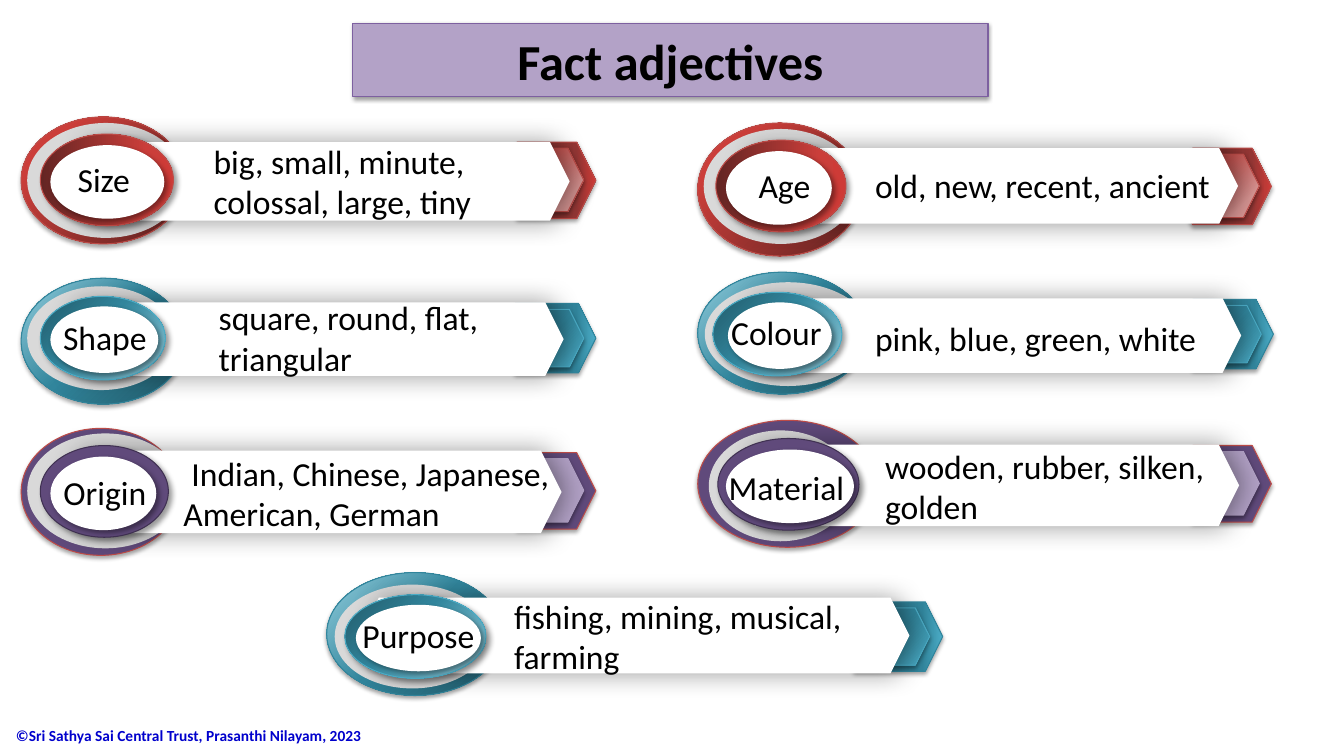
from lxml.etree import SubElement
from pptx import Presentation
from pptx.dml.color import RGBColor
from pptx.enum.shapes import MSO_SHAPE
from pptx.enum.text import MSO_ANCHOR, PP_ALIGN
from pptx.oxml.ns import qn
from pptx.util import Pt

PX = 9144  # 100 px to the inch

# Fills are one colour or (stops, clockwise angle); shadows are opacity, blur, distance, angle
RED_RING = [(0, "632523"), (80, "CB3E3A"), (100, "CE3B37")]
THEME = {
    "font": "Calibri", "title_size": 36, "body_size": 24, "footer_size": 11,
    "text": "000000", "footer": "0000CC", "white": "FFFFFF", "grey": "D9D9D9",
    "title_fill": "B3A2C7", "title_line": "7D60A0",
    "title_shadow": (38, 3.1, 1.6, 90), "edge_shadow": (35, 3.1, 1.8, 90),
    "bar_shadow": (40, 19, 3, 0), "ring_shadow": (40, 4, 3, 45),
    "red": {
        "tip": ([(0, "632523"), (80, "953735"), (100, "CE3B37")], 0),
        "inner_tip": ([(0, "632523"), (38, "C0504D"), (80, "D99694"), (100, "D99694")], 45),
        "disc": (RED_RING, 225), "ring": (RED_RING, 0),
        "line": "BF4C48", "inner_line": "BF4C48", "ring_line": "BF4C48",
    },
    "teal": {
        "tip": ([(0, "215968"), (80, "31859C"), (100, "4BACC6")], 0),
        "inner_tip": ([(0, "215968"), (53, "31859C"), (100, "4BACC6")], 45),
        "disc": ([(0, "215968"), (52, "31859C"), (100, "93CDDD")], 225),
        "ring": ([(0, "215968"), (43, "31859C"), (100, "93CDDD")], 45),
        "line": "31859C", "inner_line": "4BACC6", "ring_line": "4BACC6",
    },
    "purple": {
        "tip": "604A7B", "inner_tip": "B3A2C7", "disc": "604A7B", "ring": "604A7B",
        "line": "BF4C48", "inner_line": "B3A2C7", "ring_line": "403152",
    },
}

# Boxes are left, top, width, height; label is centre and top; indent is for the first line
ADJECTIVES = [
    dict(label="Age", words="old, new, recent, ancient", palette="red",
         tip=(1164, 147, 97, 76), disc=(692, 122, 163, 132), crescent=(698, 128, 153, 114),
         bar=(728, 147, 500, 75), ring=(710, 139, 129, 91), centre=(720, 150, 105, 73),
         label_at=(778, 159), words_box=(858, 159, 362, 50), indent=0),
    dict(label="Size", words="big, small, minute, colossal, large, tiny", palette="red",
         tip=(494, 141, 97, 76), disc=(21, 116, 163, 126), crescent=(27, 122, 156, 114),
         bar=(65, 141, 500, 78), ring=(40, 133, 132, 91), centre=(50, 144, 113, 73),
         label_at=(103, 153), words_box=(202, 135, 362, 91), indent=0),
    dict(label="Shape", words="square, round, flat, triangular", palette="teal",
         tip=(494, 301, 97, 69), disc=(21, 276, 163, 125), crescent=(27, 284, 147, 103),
         bar=(57, 300, 502, 73), ring=(40, 294, 124, 83), centre=(50, 304, 107, 66),
         label_at=(104, 309), words_box=(207, 290, 362, 91), indent=0),
    dict(label="Colour", words="pink, blue, green, white", palette="teal",
         tip=(1166, 297, 97, 69), disc=(692, 270, 168, 121), crescent=(699, 280, 165, 103),
         bar=(729, 296, 502, 74), ring=(707, 290, 128, 83), centre=(722, 300, 103, 66),
         label_at=(770, 305), words_box=(858, 310, 362, 50), indent=0),
    dict(label="Origin", words="Indian, Chinese, Japanese, American, German", palette="purple",
         tip=(494, 449, 97, 76), disc=(21, 425, 158, 126), crescent=(27, 430, 155, 114),
         bar=(57, 447, 500, 82), ring=(40, 442, 127, 91), centre=(50, 453, 105, 73),
         label_at=(104, 463), words_box=(172, 444, 415, 91), indent=8),
    dict(label="Material", words="wooden, rubber, silken, golden", palette="purple",
         tip=(1164, 442, 97, 76), disc=(692, 417, 178, 126), crescent=(703, 427, 142, 110),
         bar=(729, 441, 500, 81), ring=(712, 435, 140, 91), centre=(720, 446, 127, 73),
         label_at=(780, 458), words_box=(868, 437, 362, 91), indent=0),
    dict(label="Purpose", words="fishing, mining, musical, farming", palette="teal",
         tip=(830, 597, 105, 69), disc=(324, 568, 175, 122), crescent=(332, 580, 154, 103),
         bar=(357, 593, 545, 75), ring=(342, 590, 140, 83), centre=(353, 600, 124, 66),
         label_at=(415, 605), words_box=(500, 586, 362, 91), indent=0),
]


def draw(shapes, kind, box, fill, line=None, shadow=None):
    """Add a preset shape with a plain or gradient fill, outline and outer shadow."""
    shape = shapes.add_shape(kind, *[value * PX for value in box])
    properties = shape.element.spPr
    if isinstance(fill, str):
        shape.fill.solid()
        shape.fill.fore_color.rgb = RGBColor.from_string(fill)
    else:
        stops, angle = fill
        shape.fill.gradient()
        gradient = properties.find(qn("a:gradFill"))
        stop_list = gradient.find(qn("a:gsLst"))
        for old_stop in list(stop_list):
            stop_list.remove(old_stop)
        for position, colour in stops:
            stop = SubElement(stop_list, qn("a:gs"), pos=str(position * 1000))
            SubElement(stop, qn("a:srgbClr"), val=colour)
        gradient.find(qn("a:lin")).set("ang", str(angle * 60000))
    if line:
        shape.line.color.rgb = RGBColor.from_string(line)
        shape.line.width = Pt(0.75)
    else:
        shape.line.fill.background()
    shape.shadow.inherit = False
    if shadow:
        opacity, blur, distance, angle = shadow
        outer = SubElement(properties.find(qn("a:effectLst")), qn("a:outerShdw"),
                           blurRad=str(Pt(blur)), dist=str(Pt(distance)),
                           dir=str(angle * 60000), rotWithShape="0")
        colour = SubElement(outer, qn("a:srgbClr"), val="000000")
        SubElement(colour, qn("a:alpha"), val=str(opacity * 1000))
    return shape


def write(shape, text, size, colour, bold=False, align=PP_ALIGN.LEFT, anchor=MSO_ANCHOR.TOP):
    """Put one run of text in a shape and return its paragraph."""
    frame = shape.text_frame
    frame.word_wrap = True
    frame.vertical_anchor = anchor
    paragraph = frame.paragraphs[0]
    paragraph.alignment = align
    run = paragraph.add_run()
    run.text = text
    run.font.name = THEME["font"]
    run.font.size = Pt(size)
    run.font.bold = bold
    run.font.color.rgb = RGBColor.from_string(colour)
    return paragraph


presentation = Presentation()
presentation.slide_width = 1333 * PX
presentation.slide_height = 750 * PX
slide = presentation.slides.add_slide(presentation.slide_layouts[6])
shapes = slide.shapes

# Copyright line
footer = shapes.add_textbox(6 * PX, 710 * PX, 400 * PX, 41 * PX - PX)
write(footer, "©Sri Sathya Sai Central Trust, Prasanthi Nilayam, 2023",
      THEME["footer_size"], THEME["footer"], bold=True, anchor=MSO_ANCHOR.MIDDLE)

# Title
title = draw(shapes, MSO_SHAPE.RECTANGLE, (350, 23, 630, 73),
             THEME["title_fill"], THEME["title_line"], THEME["title_shadow"])
write(title, "Fact adjectives", THEME["title_size"], THEME["text"], bold=True,
      align=PP_ALIGN.CENTER, anchor=MSO_ANCHOR.MIDDLE)

# One banner for each kind of adjective
for item in ADJECTIVES:
    palette = THEME[item["palette"]]
    left, top, width, height = item["tip"]
    inner_tip = (left + 5, top + 6, round(width * 0.825), round(height * 0.83))

    # Pointed end, disc, bar and ring, from back to front
    for kind, box, fill, line, shadow in [
        (MSO_SHAPE.HEXAGON, item["tip"], palette["tip"], palette["line"], THEME["edge_shadow"]),
        (MSO_SHAPE.HEXAGON, inner_tip, palette["inner_tip"], palette["inner_line"],
         THEME["edge_shadow"]),
        (MSO_SHAPE.OVAL, item["disc"], palette["disc"], palette["line"], THEME["edge_shadow"]),
        (MSO_SHAPE.OVAL, item["crescent"], THEME["grey"], None, None),
        (MSO_SHAPE.HEXAGON, item["bar"], THEME["white"], None, THEME["bar_shadow"]),
        (MSO_SHAPE.OVAL, item["ring"], palette["ring"], palette["ring_line"],
         THEME["ring_shadow"]),
        (MSO_SHAPE.OVAL, item["centre"], THEME["white"], None, THEME["ring_shadow"]),
    ]:
        draw(shapes, kind, box, fill, line, shadow)

    # Label and example words
    centre, label_top = item["label_at"]
    label = shapes.add_textbox((centre - 80) * PX, label_top * PX, 160 * PX, 50 * PX)
    write(label, item["label"], THEME["body_size"], THEME["text"], align=PP_ALIGN.CENTER)
    words = shapes.add_textbox(*[value * PX for value in item["words_box"]])
    paragraph = write(words, item["words"], THEME["body_size"], THEME["text"])
    if item["indent"]:
        paragraph._p.get_or_add_pPr().set("indent", str(item["indent"] * PX))

presentation.save("out.pptx")
